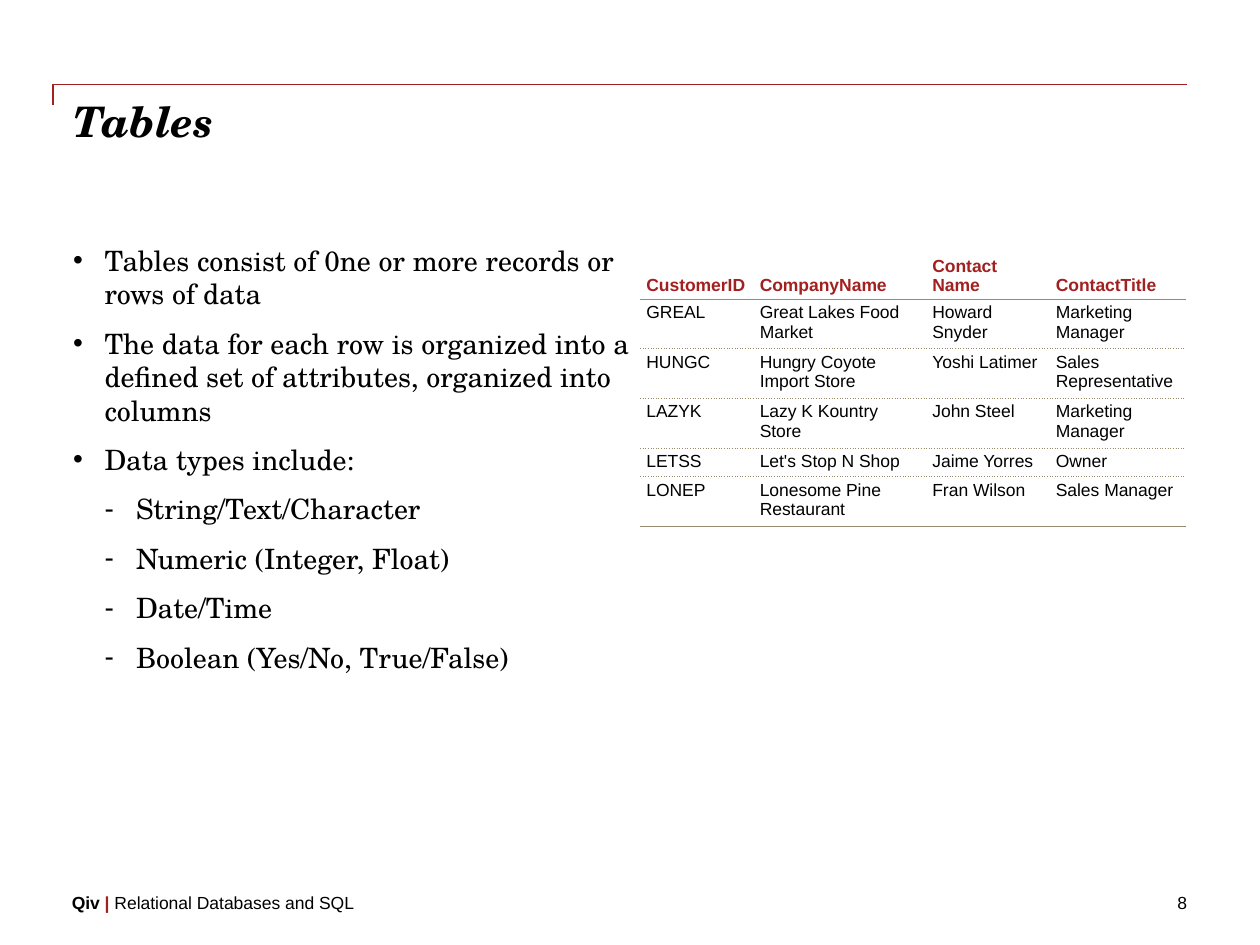
from dataclasses import dataclass

from lxml import etree
from pptx import Presentation
from pptx.dml.color import RGBColor
from pptx.enum.text import MSO_ANCHOR, PP_ALIGN
from pptx.oxml.ns import qn
from pptx.util import Inches, Pt

TOP, BOTTOM = MSO_ANCHOR.TOP, MSO_ANCHOR.BOTTOM
RIGHT = PP_ALIGN.RIGHT


@dataclass(frozen=True)
class Theme:
    heading_font: str = "TeX Gyre Schola"
    label_font: str = "Arial"
    black: str = "000000"
    red: str = "A32020"
    rule: str = "968C6D"
    title_size: int = 24
    body_size: int = 16
    label_size: int = 10


THEME = Theme()

TITLE = "Tables"
BULLETS = [
    (1, "Tables consist of 0ne or more records or rows of data"),
    (1, "The data for each row is organized into a defined set of attributes, organized into columns"),
    (1, "Data types include:"),
    (2, "String/Text/Character"),
    (2, "Numeric (Integer, Float)"),
    (2, "Date/Time"),
    (2, "Boolean (Yes/No, True/False)"),
]
BULLET_MARKS = {1: "•", 2: "-"}
BULLET_INDENT = 0.25

CUSTOMERS = [
    ("CustomerID", "CompanyName", "Contact Name", "ContactTitle"),
    ("GREAL", "Great Lakes Food Market", "Howard Snyder", "Marketing Manager"),
    ("HUNGC", "Hungry Coyote Import Store", "Yoshi Latimer", "Sales Representative"),
    ("LAZYK", "Lazy K Kountry Store", "John Steel", "Marketing Manager"),
    ("LETSS", "Let's Stop N Shop", "Jaime Yorres", "Owner"),
    ("LONEP", "Lonesome Pine Restaurant", "Fran Wilson", "Sales Manager"),
]
COLUMN_WIDTHS = [0.9, 1.37, 0.98, 1.08]
ROW_HEIGHTS = [0.37, 0.37, 0.37, 0.37, 0.21, 0.37]
TABLE_LEFT, TABLE_TOP = 5.08, 1.98

FOOTER = [
    ("Qiv", THEME.black, True),
    (" | ", THEME.red, True),
    ("Relational Databases and SQL", THEME.black, False),
]
PAGE_NUMBER = "8"
HEADER_RULE = [(0.42, 0.83), (0.42, 0.67), (9.42, 0.67)]


def add_run(paragraph, text, font, size, color=THEME.black, bold=False, italic=False):
    run = paragraph.add_run()
    run.text = text
    run.font.name = font
    run.font.size = Pt(size)
    run.font.bold = bold
    run.font.italic = italic
    run.font.color.rgb = RGBColor.from_string(color)


def add_text_frame(slide, left, top, width, height):
    box = slide.shapes.add_textbox(Inches(left), Inches(top), Inches(width), Inches(height))
    frame = box.text_frame
    frame.word_wrap = True
    frame.margin_left = frame.margin_top = frame.margin_right = frame.margin_bottom = 0
    return frame


def set_bullet(paragraph, level):
    properties = paragraph._p.get_or_add_pPr()
    properties.set("marL", str(Inches(BULLET_INDENT * level)))
    properties.set("indent", str(-Inches(BULLET_INDENT)))
    etree.SubElement(properties, qn("a:buFont"), typeface=THEME.label_font)
    etree.SubElement(properties, qn("a:buChar"), char=BULLET_MARKS[level])


def set_borders(cell, top, bottom):
    """Draw the top and bottom edges with the given dash, or none, and clear the sides."""
    properties = cell._tc.get_or_add_tcPr()
    for edge, dash in (("L", None), ("R", None), ("T", top), ("B", bottom)):
        line = etree.SubElement(properties, qn(f"a:ln{edge}"), w=str(Pt(0.75)))
        if dash is None:
            etree.SubElement(line, qn("a:noFill"))
            continue
        fill = etree.SubElement(line, qn("a:solidFill"))
        etree.SubElement(fill, qn("a:srgbClr"), val=THEME.rule)
        etree.SubElement(line, qn("a:prstDash"), val=dash)


def add_header_rule(slide):
    start, *corners = [(Inches(x), Inches(y)) for x, y in HEADER_RULE]
    builder = slide.shapes.build_freeform(*start)
    builder.add_line_segments(corners, close=False)
    rule = builder.convert_to_shape()
    rule.shadow.inherit = False
    rule.fill.background()
    rule.line.color.rgb = RGBColor.from_string(THEME.red)
    rule.line.width = Pt(1)


def add_bullets(slide):
    frame = add_text_frame(slide, 0.58, 1.93, 4.5, 3.45)
    for index, (level, text) in enumerate(BULLETS):
        paragraph = frame.add_paragraph() if index else frame.paragraphs[0]
        paragraph.space_after = Pt(9)
        set_bullet(paragraph, level)
        add_run(paragraph, text, THEME.heading_font, THEME.body_size)


def add_customer_table(slide):
    table = slide.shapes.add_table(
        len(CUSTOMERS), len(COLUMN_WIDTHS), Inches(TABLE_LEFT), Inches(TABLE_TOP),
        Inches(sum(COLUMN_WIDTHS)), Inches(sum(ROW_HEIGHTS))).table
    table.first_row = table.horz_banding = False
    for column, width in zip(table.columns, COLUMN_WIDTHS):
        column.width = Inches(width)
    for row, height in zip(table.rows, ROW_HEIGHTS):
        row.height = Inches(height)

    last = len(CUSTOMERS) - 1
    edges = [None, "solid"] + ["sysDot"] * (last - 1) + ["solid"]
    for row_index, record in enumerate(CUSTOMERS):
        is_header = row_index == 0
        for column_index, text in enumerate(record):
            cell = table.cell(row_index, column_index)
            cell.margin_left = cell.margin_right = Inches(0.05)
            cell.margin_top = cell.margin_bottom = Inches(0.03)
            cell.vertical_anchor = BOTTOM if is_header else TOP
            set_borders(cell, edges[row_index], edges[row_index + 1])
            cell.fill.background()
            add_run(cell.text_frame.paragraphs[0], text, THEME.label_font, THEME.label_size,
                    THEME.red if is_header else THEME.black, bold=is_header)


def add_footer(slide):
    paragraph = add_text_frame(slide, 0.57, 7.08, 7.18, 0.17).paragraphs[0]
    for text, color, bold in FOOTER:
        add_run(paragraph, text, THEME.label_font, THEME.label_size, color, bold)
    paragraph = add_text_frame(slide, 7.75, 7.08, 1.67, 0.17).paragraphs[0]
    paragraph.alignment = RIGHT
    add_run(paragraph, PAGE_NUMBER, THEME.label_font, THEME.label_size)


def main():
    presentation = Presentation()
    presentation.slide_width, presentation.slide_height = Inches(10), Inches(7.5)
    slide = presentation.slides.add_slide(presentation.slide_layouts[6])
    add_header_rule(slide)
    title = add_text_frame(slide, 0.58, 0.76, 8.83, 0.4).paragraphs[0]
    add_run(title, TITLE, THEME.heading_font, THEME.title_size, bold=True, italic=True)
    add_bullets(slide)
    add_customer_table(slide)
    add_footer(slide)
    presentation.save("out.pptx")


if __name__ == "__main__":
    main()
